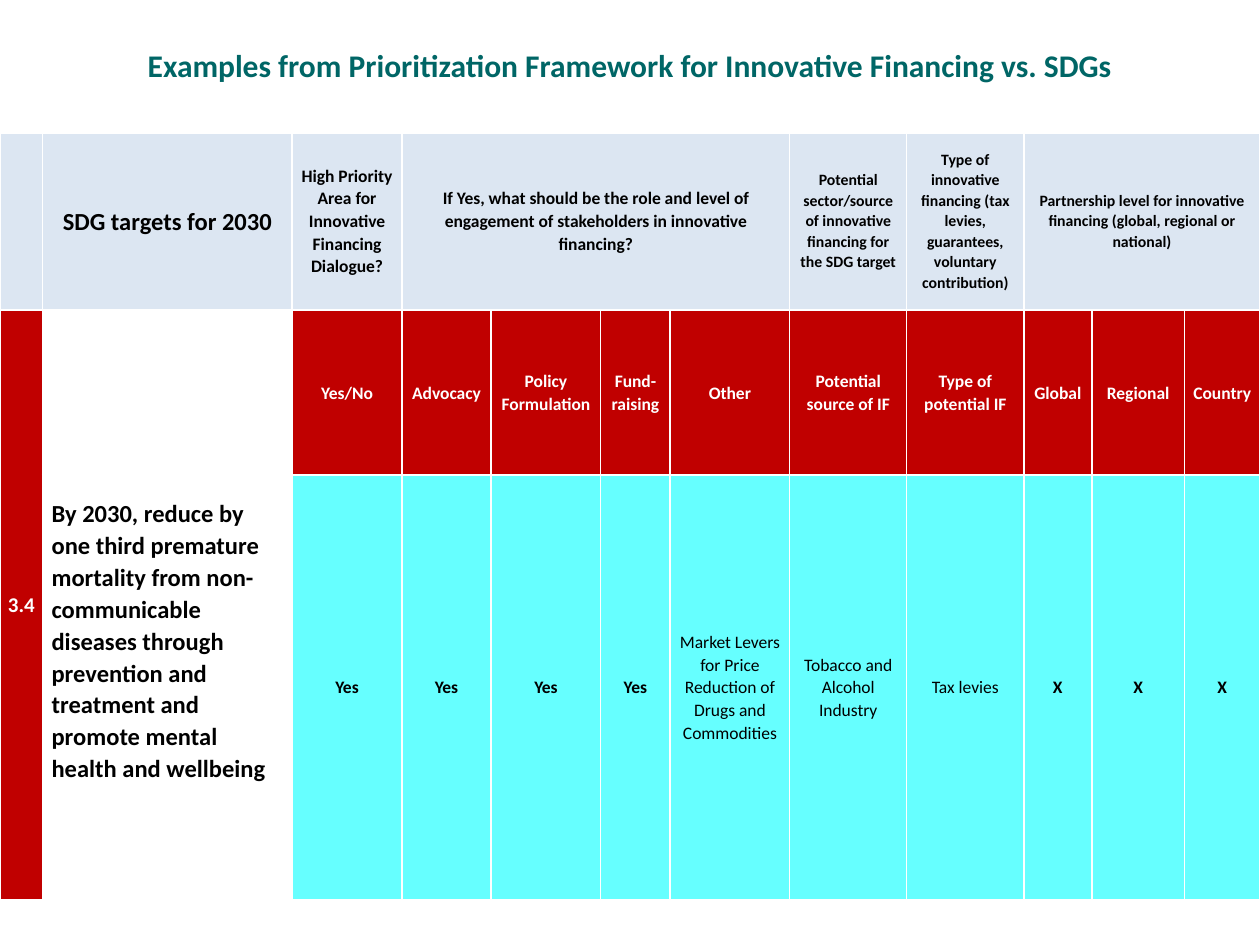
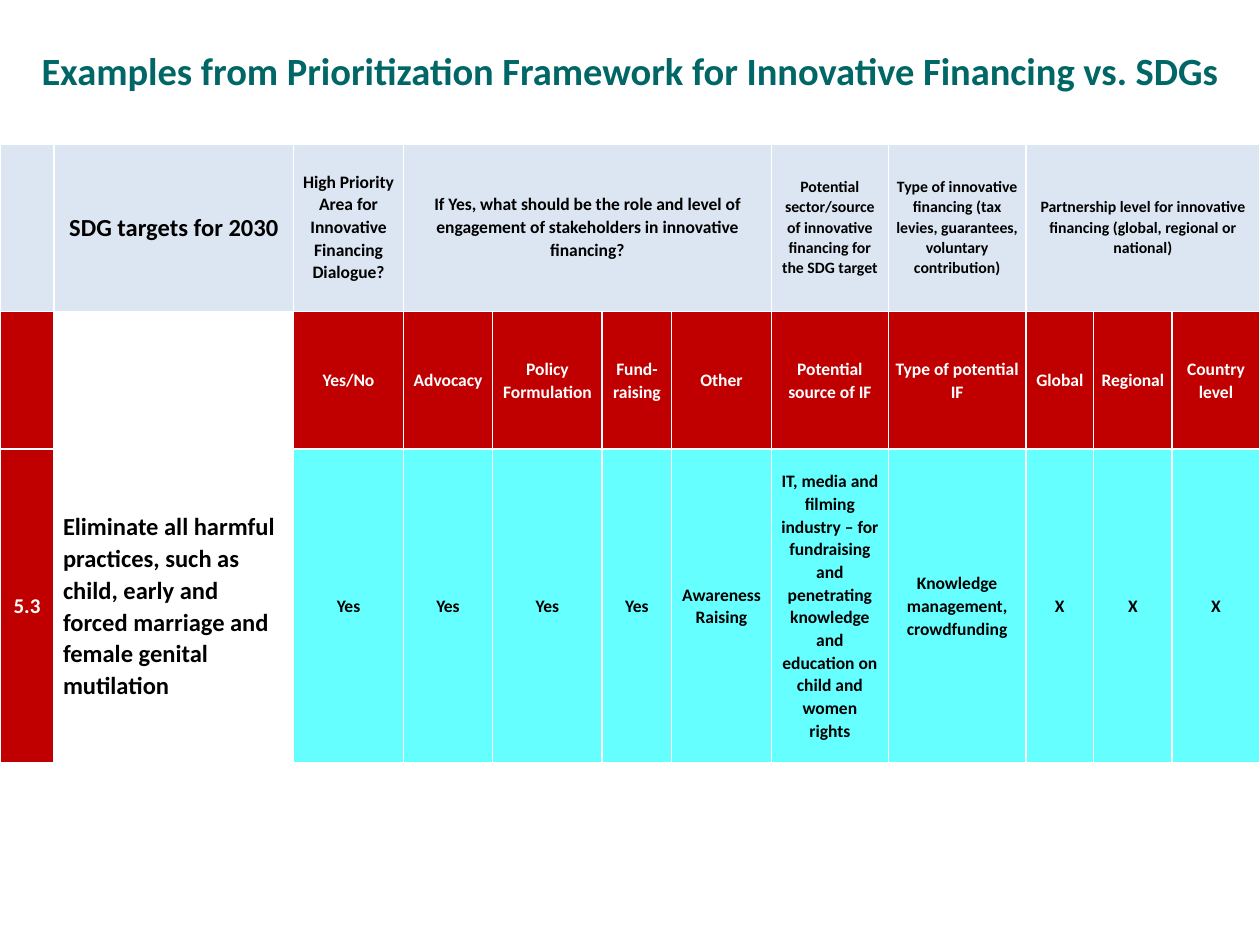
from dataclasses import dataclass

from lxml import etree
from pptx import Presentation
from pptx import util as u
from pptx.dml.color import RGBColor
from pptx.enum import text
from pptx.oxml import ns


@dataclass(frozen=True)
class Theme:
    font: str = "Calibri"
    teal: str = "006666"
    pale: str = "DCE6F2"
    red: str = "C00000"
    cyan: str = "66FFFF"
    white: str = "FFFFFF"
    black: str = "000000"
    target: int = 14
    number: int = 12
    body: int = 10
    small: int = 9
    line: int = 1
    title_line: int = 3


TITLE = "Examples from Prioritization Framework for Innovative Financing vs. SDGs"
# column: (text, columns spanned)
QUESTIONS = {
    1: ("SDG targets for 2030", 1),
    2: ("High Priority Area for Innovative Financing Dialogue?", 1),
    3: ("If Yes, what should be the role and level of engagement of "
        "stakeholders in innovative financing?", 4),
    7: ("Potential sector/source of innovative financing for the SDG target", 1),
    8: ("Type of innovative financing (tax levies, guarantees, "
        "voluntary contribution)", 1),
    9: ("Partnership level for innovative financing "
        "(global, regional or national)", 3),
}
LABELS = ["Yes/No", "Advocacy", "Policy Formulation", "Fund-raising", "Other",
          "Potential source of IF", "Type of potential IF", "Global", "Regional"]


@dataclass
class Target:
    number: str
    goal: str
    other: str
    source: str
    kind: str
    country: str
    title_size: int
    widths: list
    heights: list
    number_spans: bool = False
    plain_answers: bool = False
    goal_bottom: float = 0


class Deck:
    def __init__(self, theme):
        self.theme = theme
        self.prs = Presentation()
        self.prs.slide_width, self.prs.slide_height = u.Cm(25.4), u.Cm(19.05)
        self.s = None

    def slide(self):
        self.s = self.prs.slides.add_slide(self.prs.slide_layouts[6])

    def grid(self, widths, heights):
        frame = self.s.shapes.add_table(len(heights), len(widths), 0, 0,
                                        u.Cm(sum(widths)), u.Cm(sum(heights)))
        table = frame.table
        table.horz_banding = table.first_row = False
        for column, width in zip(table.columns, widths):
            column.width = u.Cm(width)
        for row, height in zip(table.rows, heights):
            row.height = u.Cm(height)
        return table

    def borders(self, cell, top, bottom):
        """Draw white lines around a cell; widths in points."""
        props = cell._tc.get_or_add_tcPr()
        sides = {"L": self.theme.line, "R": self.theme.line, "T": top, "B": bottom}
        for i, (side, width) in enumerate(sides.items()):
            ln = etree.Element(ns.qn(f"a:ln{side}"), w=str(u.Pt(width)))
            fill = etree.SubElement(ln, ns.qn("a:solidFill"))
            etree.SubElement(fill, ns.qn("a:srgbClr"), val=self.theme.white)
            props.insert(i, ln)

    def paint(self, cell, fill, row):
        cell.fill.solid()
        cell.fill.fore_color.rgb = RGBColor.from_string(fill)
        thin, thick = self.theme.line, self.theme.title_line
        self.borders(cell, thick if row == 1 else thin, thick if row == 0 else thin)

    def label(self, cell, words, size, color, bold=True, centred=True,
              side=0.14, bottom=0, before=0):
        cell.vertical_anchor = text.MSO_ANCHOR.MIDDLE
        cell.margin_left = cell.margin_right = u.Cm(side)
        cell.margin_top, cell.margin_bottom = 0, u.Cm(bottom)
        cell.text = words
        p = cell.text_frame.paragraphs[0]
        p.alignment = text.PP_ALIGN.CENTER if centred else text.PP_ALIGN.LEFT
        p.line_spacing = 1.07
        p.space_before = u.Pt(before)
        p.font.name, p.font.size, p.font.bold = self.theme.font, u.Pt(size), bold
        p.font.color.rgb = RGBColor.from_string(color)

    def framework(self, target):
        """Add a slide with the whole prioritization table for one SDG target."""
        t = self.theme
        self.slide()
        table = self.grid(target.widths, target.heights)
        for row, fill in enumerate([t.white, t.pale, t.red, t.cyan]):
            for col in range(len(target.widths)):
                if row > 1 and col < 2:
                    fill_here = [t.red, t.white][col]
                else:
                    fill_here = fill
                self.paint(table.cell(row, col), fill_here, row)

        table.cell(0, 0).merge(table.cell(0, len(target.widths) - 1))
        self.label(table.cell(0, 0), TITLE, target.title_size, t.teal, before=2)

        for col, (words, span) in QUESTIONS.items():
            if span > 1:
                table.cell(1, col).merge(table.cell(1, col + span - 1))
            size = t.target if col == 1 else t.body if col < 7 else t.small
            self.label(table.cell(1, col), words, size, t.black)

        for col, words in enumerate(LABELS + [target.country], 2):
            self.label(table.cell(2, col), words, t.body, t.white)

        number_cell = table.cell(2 if target.number_spans else 3, 0)
        if target.number_spans:
            number_cell.merge(table.cell(3, 0))
        self.label(number_cell, target.number, t.number, t.white)
        self.label(table.cell(3, 1), target.goal, t.target, t.black, centred=False,
                   side=0.18, bottom=target.goal_bottom)

        details = [target.other, target.source, target.kind]
        for col, words in enumerate(["Yes"] * 4 + details + ["X"] * 3, 2):
            bold = not (target.plain_answers and words in details)
            self.label(table.cell(3, col), words, t.body, t.black, bold, side=0.18)


TARGETS = [
    Target(
        number="3.4",
        goal="By 2030, reduce by one third premature mortality from "
             "non-communicable diseases through prevention and treatment and "
             "promote mental health and wellbeing",
        other="Market Levers for Price Reduction of Drugs and Commodities",
        source="Tobacco and Alcohol Industry",
        kind="Tax levies",
        country="Country",
        title_size=18,
        widths=[0.86, 5.03, 2.21, 1.8, 2.21, 1.4, 2.41, 2.36, 2.36, 1.37, 1.87, 1.52],
        heights=[2.65, 3.6, 3.33, 8.55],
        number_spans=True,
        plain_answers=True,
        goal_bottom=1.88,
    ),
    Target(
        number="5.3",
        goal="Eliminate all harmful practices, such as child, early and forced "
             "marriage and female genital mutilation",
        other="Awareness Raising",
        source="IT, media and filming industry – for fundraising and penetrating "
               "knowledge and education on child and women rights",
        kind="Knowledge management, crowdfunding",
        country="Country level",
        title_size=22,
        widths=[1.09, 4.83, 2.21, 1.8, 2.21, 1.4, 2.01, 2.36, 2.77, 1.37, 1.58, 1.77],
        heights=[2.87, 3.41, 2.77, 6.32],
    ),
]


def main():
    deck = Deck(Theme())
    for target in TARGETS:
        deck.framework(target)
    deck.prs.save("out.pptx")


if __name__ == "__main__":
    main()
